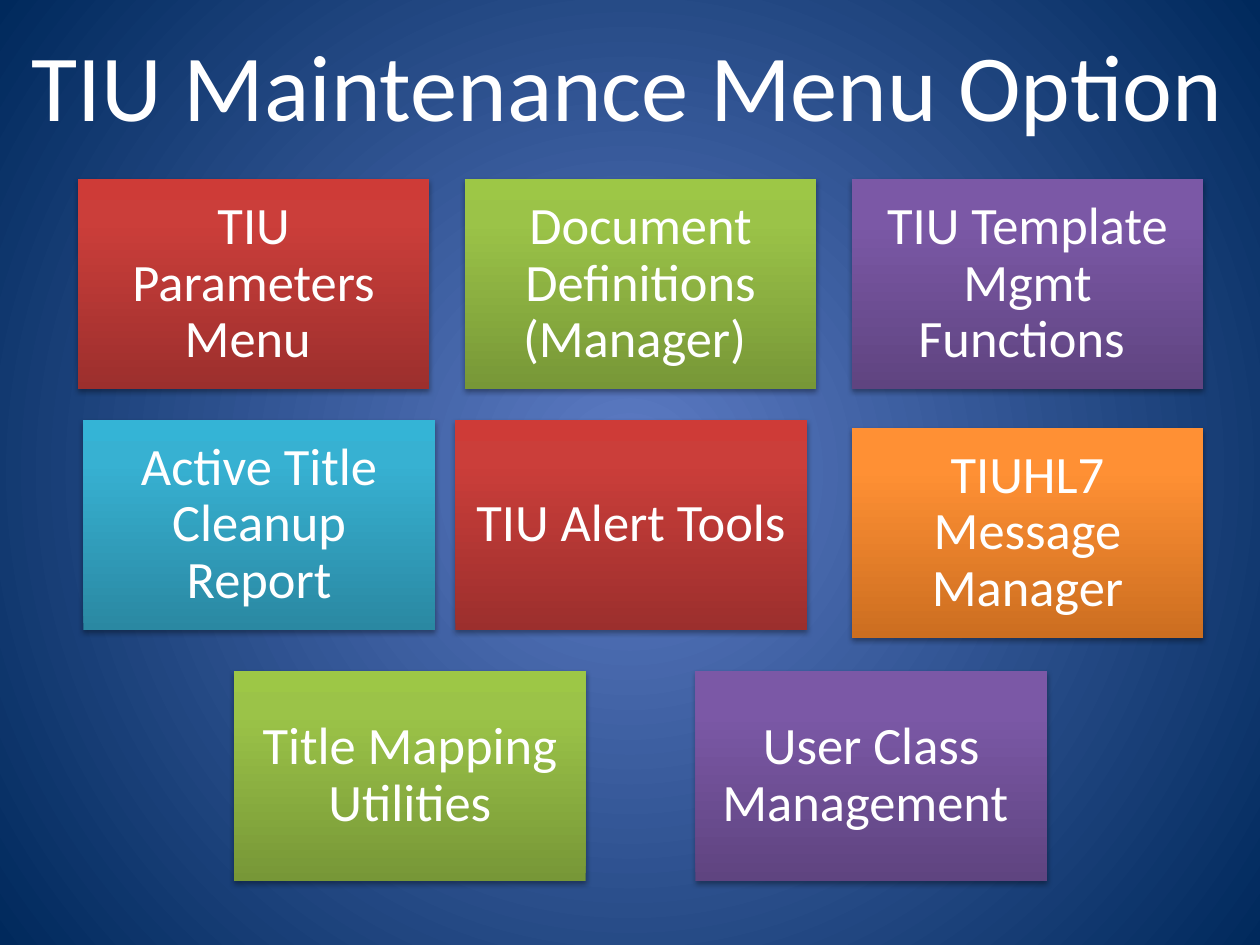
from lxml import etree
from pptx import Presentation
from pptx import util as u
from pptx.dml.color import RGBColor
from pptx.enum import shapes, text
from pptx.oxml.ns import qn

FONT = "Calibri"
WHITE = "FFFFFF"
TILE_WIDTH, TILE_HEIGHT = 7.09, 4.24
TILE_INSET = 0.3

# Gradient stops of each tile colour, from bottom to top
RED = ((0, "9C2F2D"), (80, "CB3E3A"), (100, "CE3B37"))
GREEN = ((0, "779737"), (80, "9BC348"), (100, "9DC746"))
PURPLE = ((0, "5F4480"), (80, "7B58A6"), (100, "7C57A8"))
BLUE = ((0, "2A88A2"), (80, "37B1D2"), (100, "34B4D6"))
ORANGE = ((0, "CC6E20"), (80, "FF9034"), (100, "FF9136"))
BACKGROUND = ((0, "5E7CC5"), (100, "00295C"))

# Label, colour, left, top (cm)
TILES = (
    ("TIU Parameters Menu ", RED, 1.57, 3.61),
    ("Document Definitions (Manager) ", GREEN, 9.37, 3.61),
    ("TIU Template Mgmt Functions ", PURPLE, 17.17, 3.61),
    ("Active Title Cleanup Report", BLUE, 1.68, 8.46),
    ("TIUHL7 Message Manager", ORANGE, 17.17, 8.62),
    ("TIU Alert Tools", RED, 9.18, 8.46),
    ("Title Mapping Utilities", GREEN, 4.72, 13.52),
    ("User Class Management ", PURPLE, 14.02, 13.52),
)


def color(hex_value):
    return RGBColor.from_string(hex_value)


def add_child(parent, tag, **attributes):
    child = etree.SubElement(parent, qn(tag))
    for name, value in attributes.items():
        child.set(name, str(value))
    return child


def set_gradient(fill, element, stops, radial=False):
    """Give the fill several stops, upward or out from the centre."""
    fill.gradient()
    gradient = element.find(".//" + qn("a:gradFill"))
    for child in list(gradient):
        gradient.remove(child)
    stop_list = add_child(gradient, "a:gsLst")
    for position, hex_value in stops:
        stop = add_child(stop_list, "a:gs", pos=position * 1000)
        add_child(stop, "a:srgbClr", val=hex_value)
    if radial:
        circle = add_child(gradient, "a:path", path="circle")
        add_child(circle, "a:fillToRect", l=50000, t=50000, r=50000, b=50000)
    else:
        add_child(gradient, "a:lin", ang=270 * 60000, scaled=0)


def set_shadow(shape):
    shape.shadow.inherit = False
    effects = shape.element.spPr.find(qn("a:effectLst"))
    shadow = add_child(effects, "a:outerShdw", blurRad=u.Pt(3.1), dist=u.Pt(1.8),
                       dir=90 * 60000, rotWithShape=0)
    black = add_child(shadow, "a:srgbClr", val="000000")
    add_child(black, "a:alpha", val=35000)


def write_text(shape, content, size, line_spacing, frame_format):
    frame = shape.text_frame
    for name, value in frame_format.items():
        setattr(frame, name, value)
    paragraph = frame.paragraphs[0]
    paragraph.alignment = text.PP_ALIGN.CENTER
    paragraph.line_spacing = line_spacing
    run = paragraph.add_run()
    run.text = content
    for name, value in {"name": FONT, "size": u.Pt(size)}.items():
        setattr(run.font, name, value)
    run.font.color.rgb = color(WHITE)


def add_tile(slide, label, stops, left, top, width=TILE_WIDTH):
    shape = slide.shapes.add_shape(
        shapes.MSO_SHAPE.RECTANGLE,
        u.Cm(left), u.Cm(top), u.Cm(width), u.Cm(TILE_HEIGHT))
    set_gradient(shape.fill, shape.element, stops)
    shape.line.fill.background()
    set_shadow(shape)
    margins = {f"margin_{side}": u.Cm(TILE_INSET)
               for side in ("left", "top", "right", "bottom")}
    write_text(shape, label, 30, 0.9, {
        "word_wrap": True, "vertical_anchor": text.MSO_ANCHOR.MIDDLE, **margins})


def add_title(slide, content):
    box = slide.shapes.add_textbox(u.Cm(0), u.Cm(0.43), u.Cm(25.3), u.Cm(2.57))
    write_text(box, content, 54, 1.0, {
        "word_wrap": False, "auto_size": text.MSO_AUTO_SIZE.SHAPE_TO_FIT_TEXT})


def main():
    presentation = Presentation()
    presentation.slide_width, presentation.slide_height = u.Cm(25.4), u.Cm(19.05)
    slide = presentation.slides.add_slide(presentation.slide_layouts[6])

    # Background glow
    set_gradient(slide.background.fill, slide.element, BACKGROUND, radial=True)

    # Menu tiles
    for label, stops, left, top in TILES:
        add_tile(slide, label, stops, left, top)

    # Title
    add_title(slide, "TIU Maintenance Menu Option")
    presentation.save("out.pptx")


if __name__ == "__main__":
    main()
